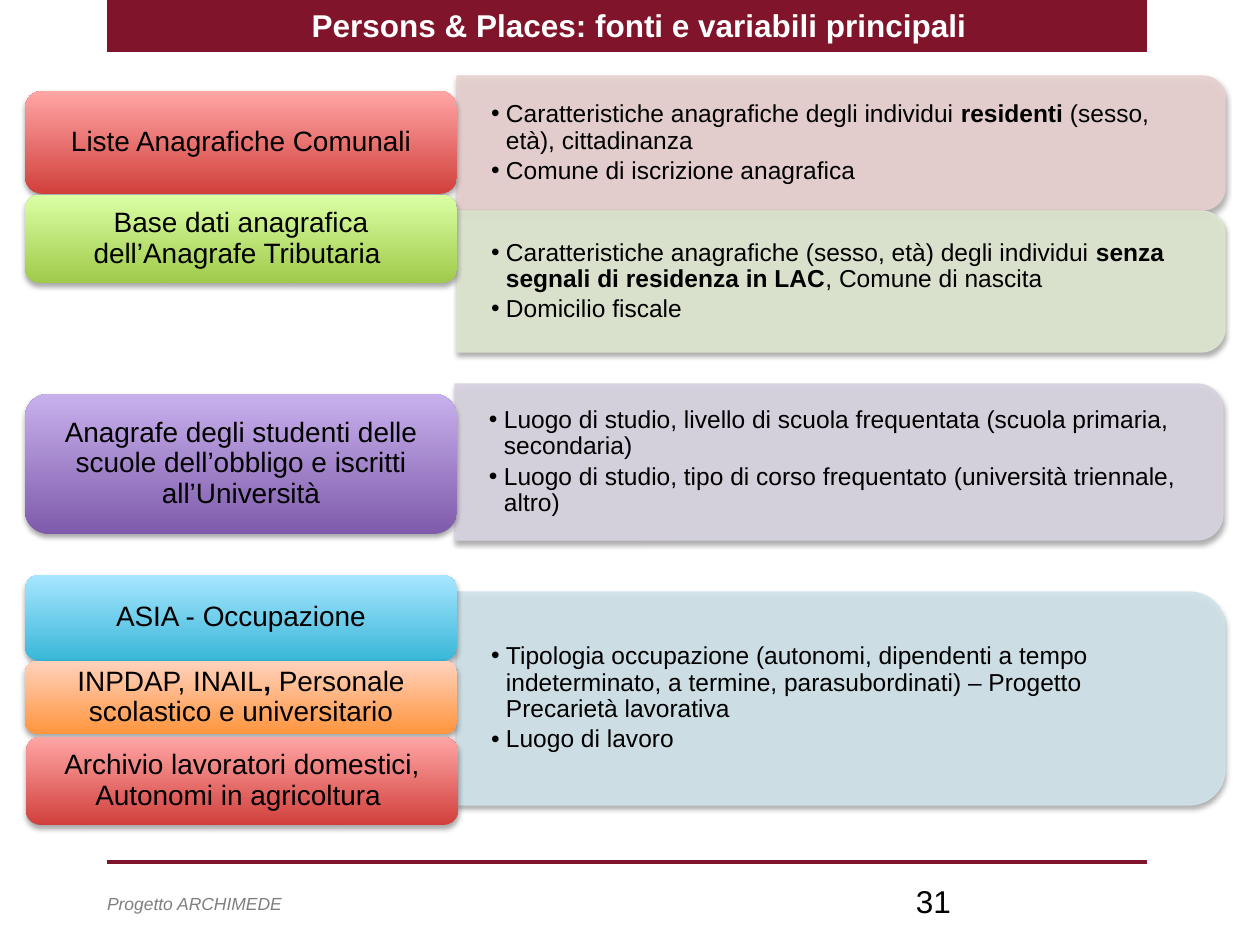
from lxml.etree import SubElement
from pptx import Presentation
from pptx.dml.color import RGBColor
from pptx.enum.shapes import MSO_CONNECTOR as Connector, MSO_SHAPE as Shape
from pptx.enum.text import MSO_ANCHOR as Anchor, MSO_AUTO_SIZE as AutoSize, PP_ALIGN as Align
from pptx.oxml.ns import qn
from pptx.util import Emu, Inches, Pt

MAROON = "7F142A"

SECTIONS = [
    ((457, 76, 768, 134), "E8D0D0",
     ["Caratteristiche anagrafiche degli individui **residenti** (sesso, età), cittadinanza",
      "Comune di iscrizione anagrafica"],
     [((25, 91, 432, 103), "D1403C", "FFA6A5", "Liste Anagrafiche Comunali")]),
    ((457, 211, 768, 141), "DEE7D1",
     ["Caratteristiche anagrafiche (sesso, età) degli individui "
      "**senza segnali di residenza in LAC**, Comune di nascita",
      "Domicilio fiscale"],
     [((25, 195, 432, 88), "A0CA4A", "DAFFA5",
       "Base dati anagrafica dell’Anagrafe Tributaria ")]),
    ((455, 384, 768, 156), "D8D3E0",
     ["Luogo di studio, livello di scuola frequentata (scuola primaria, secondaria)",
      "Luogo di studio, tipo di corso frequentato (università triennale, altro)"],
     [((25, 394, 432, 140), "7F5BAB", "C8B0ED",
       "Anagrafe degli studenti delle scuole dell’obbligo e iscritti all’Università")]),
    ((457, 592, 768, 213), "D0E3EA",
     ["Tipologia occupazione (autonomi, dipendenti a tempo indeterminato, a termine, "
      "parasubordinati) – Progetto Precarietà lavorativa",
      "Luogo di lavoro"],
     [((25, 575, 432, 86), "39B7D8", "A7E6FF", "ASIA - Occupazione"),
      ((25, 661, 432, 73), "FF953E", "FFD2BD",
       "INPDAP, INAIL**, **Personale scolastico e universitario"),
      ((26, 737, 432, 88), "D1403C", "FFA6A5",
       "Archivio lavoratori domestici, Autonomi in agricoltura ")]),
]


def px(length):
    return Emu(round(length * 914400 / 126))


def place(box):
    return [px(length) for length in box]


def color(value):
    return RGBColor.from_string(value)


def add_bullet(paragraph):
    props = paragraph._p.get_or_add_pPr()
    props.set("marL", str(px(15)))
    props.set("indent", str(px(-15)))
    SubElement(props, qn("a:buFont"), typeface="Arial")
    SubElement(props, qn("a:buChar"), char="•")


def write(frame, paragraphs, size=18, ink="000000", bold=False, italic=False,
          align=Align.LEFT, anchor=Anchor.TOP, insets=(13, 6), spacing=None,
          after=0, bullets=False):
    frame.word_wrap = True
    frame.auto_size = AutoSize.NONE
    frame.vertical_anchor = anchor
    frame.margin_left = frame.margin_right = px(insets[0])
    frame.margin_top = frame.margin_bottom = px(insets[1])
    for index, text in enumerate(paragraphs):
        paragraph = frame.paragraphs[0] if index == 0 else frame.add_paragraph()
        if bullets:
            add_bullet(paragraph)
        paragraph.alignment = align
        paragraph.line_spacing = spacing
        paragraph.space_after = Pt(after)
        for part, words in enumerate(text.split("**")):
            run = paragraph.add_run()
            run.text = words
            run.font.name = "Arial"
            run.font.size = Pt(size)
            run.font.bold = bold or part % 2 == 1
            run.font.italic = italic
            run.font.color.rgb = color(ink)


def add_text(slide, box, paragraphs, **style):
    write(slide.shapes.add_textbox(*place(box)).text_frame, paragraphs, **style)


def set_alpha(fill, percent):
    rgb = fill._xPr.find(qn("a:solidFill"))[0]
    SubElement(rgb, qn("a:alpha"), val=str(percent * 1000))


def cast_shadow(shape):
    shape.shadow.inherit = False
    effects = shape._element.spPr.find(qn("a:effectLst"))
    shadow = SubElement(effects, qn("a:outerShdw"), blurRad=str(Pt(3.1)),
                        dist=str(Pt(1.8)), dir="5400000", rotWithShape="0")
    black = SubElement(shadow, qn("a:srgbClr"), val="000000")
    SubElement(black, qn("a:alpha"), val="35000")


def add_panel(slide, box, tint, variables):
    left, top, width, height = box
    turned = (left + (width - height) / 2, top + (height - width) / 2, height, width)
    panel = slide.shapes.add_shape(Shape.ROUND_2_SAME_RECTANGLE, *place(turned))
    panel.rotation = 90
    for fill in (panel.fill, panel.line.fill):
        fill.solid()
        fill.fore_color.rgb = color(tint)
        set_alpha(fill, 90)
    panel.line.width = Pt(0.75)
    cast_shadow(panel)
    add_text(slide, (left, top, width - 7, height), variables, size=14,
             anchor=Anchor.MIDDLE, insets=(34, 18), spacing=0.9, after=2.1, bullets=True)


def add_source(slide, box, dark, light, name):
    source = slide.shapes.add_shape(Shape.ROUNDED_RECTANGLE, *place(box))
    source.fill.gradient()
    source.fill.gradient_angle = 90
    for stop, shade in zip(source.fill.gradient_stops, (dark, light)):
        stop.color.rgb = color(shade)
    source.line.fill.background()
    cast_shadow(source)
    write(source.text_frame, [name], size=16, align=Align.CENTER,
          anchor=Anchor.MIDDLE, insets=(9, 4), spacing=0.9)


def add_header(slide, box):
    left, top, width, height = box
    banner = slide.shapes.add_shape(Shape.RECTANGLE, *place(box))
    banner.fill.solid()
    banner.fill.fore_color.rgb = color(MAROON)
    banner.line.fill.background()
    banner.shadow.inherit = False
    title = slide.shapes.title
    slide.shapes._spTree.append(title._element)
    title.left, title.top, title.width, title.height = place(
        (left + 10, top, width + 4, height + 2))
    write(title.text_frame, ["Persons & Places: fonti e variabili principali"],
          ink="FFFFFF", bold=True, align=Align.CENTER)


def add_footer(slide, box):
    left, top, width, height = box
    rule = slide.shapes.add_connector(
        Connector.STRAIGHT, *place((left, top, left + width, top)))
    rule.line.color.rgb = color(MAROON)
    rule.line.width = Pt(2)
    SubElement(rule._element.spPr, qn("a:effectLst"))
    add_text(slide, (left - 13, top + 25, 776, 34), ["Progetto ARCHIMEDE"],
             size=10, ink="7F7F7F", italic=True)
    add_text(slide, (left + 796, top + 14, 294, 50), ["31"])


def main():
    deck = Presentation()
    deck.slide_width, deck.slide_height = Inches(10), Inches(7.5)
    slide = deck.slides.add_slide(deck.slide_layouts[5])
    add_header(slide, (107, 0, 1040, 52))
    for panel_box, tint, variables, sources in SECTIONS:
        add_panel(slide, panel_box, tint, variables)
        for source in sources:
            add_source(slide, *source)
    add_footer(slide, (107, 862, 1040, 64))
    deck.save("out.pptx")


if __name__ == "__main__":
    main()
